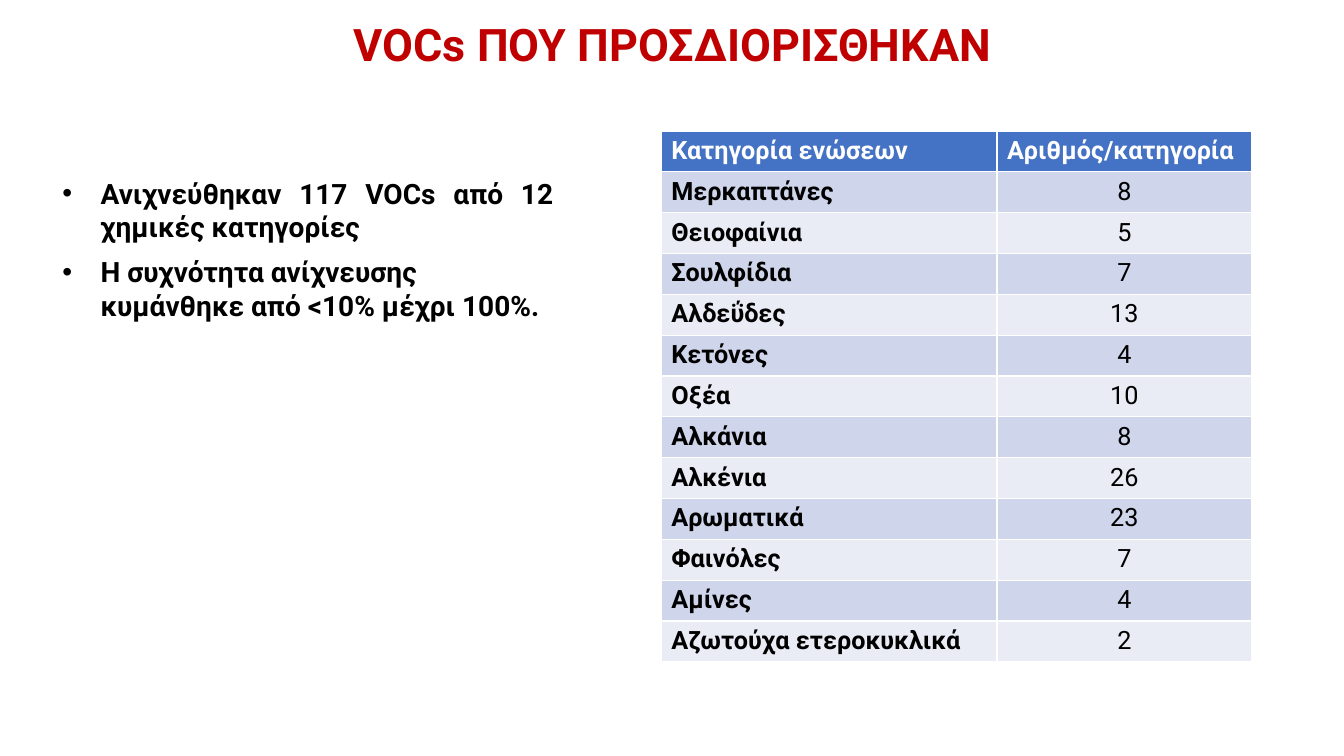
import dataclasses
import typing

import lxml.etree
import pptx
import pptx.dml.color
import pptx.enum.text
import pptx.oxml.ns
import pptx.util

RGB = pptx.dml.color.RGBColor
ALIGN = pptx.enum.text.PP_ALIGN
FIT = pptx.enum.text.MSO_AUTO_SIZE

RED = RGB(0xC0, 0x00, 0x00)
BLACK = RGB(0x00, 0x00, 0x00)
WHITE = RGB(0xFF, 0xFF, 0xFF)
BLUE = RGB(0x44, 0x72, 0xC4)
BANDS = (RGB(0xE9, 0xEB, 0xF5), RGB(0xCF, 0xD5, 0xEA))

FONT = "Roboto"
WIDE = pptx.util.Inches(13.33)
HIGH = pptx.util.Inches(7.5)
INDENT = pptx.util.Inches(0.38)


def across(share: float) -> int:
    return round(WIDE * share / 100)


def down(share: float) -> int:
    return round(HIGH * share / 100)


@dataclasses.dataclass(frozen=True)
class Box:
    left: float
    top: float
    width: float
    height: float

    def place(self) -> tuple[int, int, int, int]:
        return across(self.left), down(self.top), across(self.width), down(self.height)


@dataclasses.dataclass(frozen=True)
class Style:
    size: int
    color: RGB
    bold: bool = True


class Point(typing.NamedTuple):
    text: str
    align: ALIGN


class Group(typing.NamedTuple):
    name: str
    count: str


TITLE = Box(6.9, 0, 86.27, 12.53)
NOTES = Box(3.9, 22.67, 38.03, 26.8)
TABLE = Box(49.2, 17.33, 43.95, 70.27)
COLUMNS = (24.98, 18.97)

POINTS = (
    Point("Ανιχνεύθηκαν 117 VOCs από 12 χημικές κατηγορίες", ALIGN.JUSTIFY),
    Point("Η συχνότητα ανίχνευσης κυμάνθηκε από <10% μέχρι 100%.", ALIGN.LEFT),
)

GROUPS = (
    Group("Κατηγορία ενώσεων", "Αριθμός/κατηγορία"),
    Group("Μερκαπτάνες", "8"),
    Group("Θειοφαίνια", "5"),
    Group("Σουλφίδια", "7"),
    Group("Αλδεΰδες", "13"),
    Group("Κετόνες", "4"),
    Group("Οξέα", "10"),
    Group("Αλκάνια", "8"),
    Group("Αλκένια", "26"),
    Group("Αρωματικά", "23"),
    Group("Φαινόλες", "7"),
    Group("Αμίνες", "4"),
    Group("Αζωτούχα ετεροκυκλικά", "2"),
)


def write(para, text: str, style: Style, align: ALIGN) -> None:
    para.alignment = align
    run = para.add_run()
    run.text = text
    run.font.name = FONT
    run.font.size = pptx.util.Pt(style.size)
    run.font.bold = style.bold
    run.font.color.rgb = style.color


def add_bullet(para) -> None:
    props = para._p.get_or_add_pPr()
    props.set("marL", str(INDENT))
    props.set("indent", str(-INDENT))
    for tag, key, value in (("a:buFont", "typeface", "Arial"), ("a:buChar", "char", "•")):
        node = lxml.etree.SubElement(props, pptx.oxml.ns.qn(tag))
        node.set(key, value)


def draw_title(slide) -> None:
    title = slide.shapes.title
    title.left, title.top, title.width, title.height = TITLE.place()
    frame = title.text_frame
    frame.auto_size = FIT.NONE
    frame.vertical_anchor = pptx.enum.text.MSO_ANCHOR.MIDDLE
    para = frame.paragraphs[0]
    para.line_spacing = 0.9
    write(para, "VOCs ΠΟΥ ΠΡΟΣΔΙΟΡΙΣΘΗΚΑΝ", Style(32, RED), ALIGN.CENTER)


def draw_notes(slide) -> None:
    frame = slide.shapes.add_textbox(*NOTES.place()).text_frame
    frame.word_wrap = True
    for place, point in enumerate(POINTS):
        para = frame.add_paragraph() if place else frame.paragraphs[0]
        para.space_after = pptx.util.Pt(8)
        write(para, point.text, Style(20, BLACK), point.align)
        add_bullet(para)


def draw_table(slide) -> None:
    table = slide.shapes.add_table(len(GROUPS), len(COLUMNS), *TABLE.place()).table
    for column, share in zip(table.columns, COLUMNS):
        column.width = across(share)
    for row, group in enumerate(GROUPS):
        table.rows[row].height = down(TABLE.height / len(GROUPS))
        for col, text in enumerate(group):
            head = row == 0
            cell = table.cell(row, col)
            cell.fill.solid()
            cell.fill.fore_color.rgb = BLUE if head else BANDS[row % 2]
            style = Style(18, WHITE if head else BLACK, head or col == 0)
            align = ALIGN.LEFT if head or col == 0 else ALIGN.CENTER
            write(cell.text_frame.paragraphs[0], text, style, align)


def main() -> None:
    deck = pptx.Presentation()
    deck.slide_width, deck.slide_height = WIDE, HIGH
    slide = deck.slides.add_slide(deck.slide_layouts[5])
    draw_title(slide)
    draw_notes(slide)
    draw_table(slide)
    deck.save("out.pptx")


if __name__ == "__main__":
    main()
